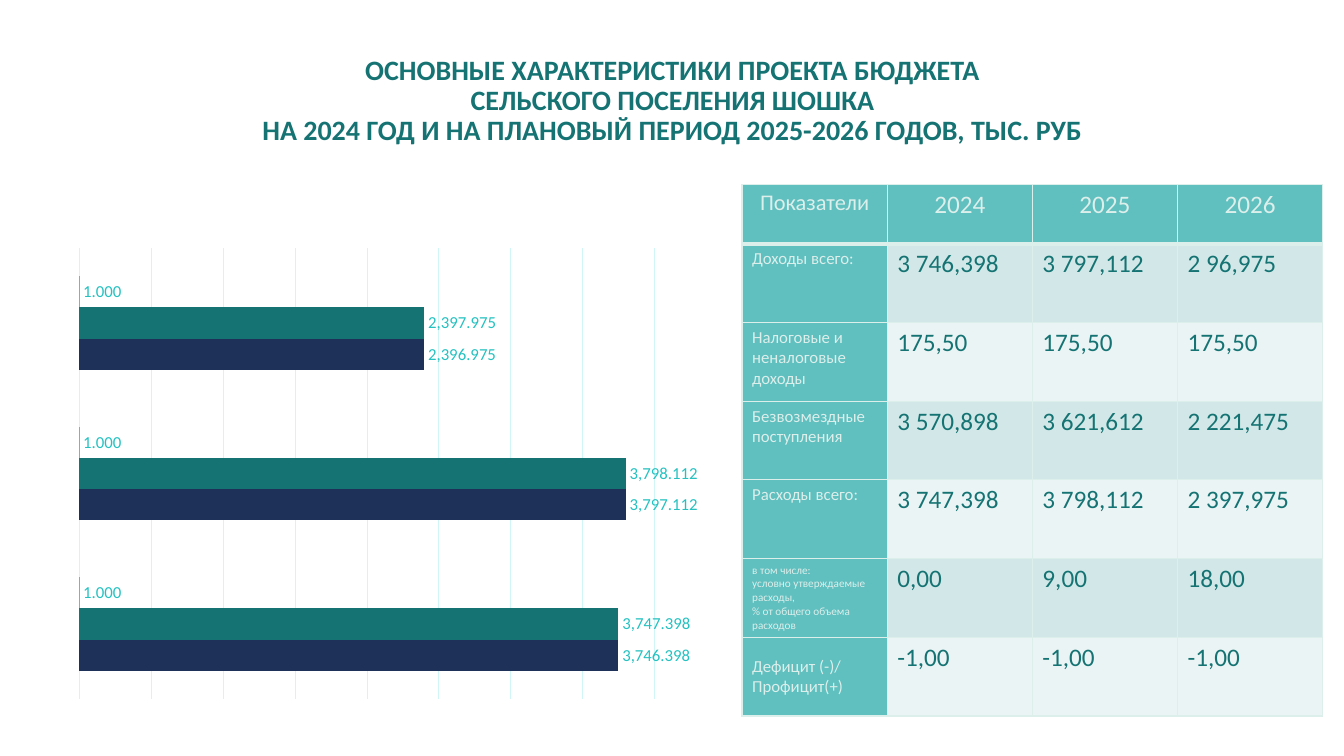
from lxml import etree
from pptx import Presentation
from pptx import util as u
from pptx.chart import data
from pptx.dml import color
from pptx.enum import chart as charts, text
from pptx.oxml import ns

TEAL = color.RGBColor(0x16, 0x73, 0x73)
NAVY = color.RGBColor(0x1E, 0x32, 0x59)
AQUA = color.RGBColor(0x60, 0xBF, 0xBF)
BRIGHT = color.RGBColor(0x25, 0xC1, 0xC1)
GRID = color.RGBColor(0xD0, 0xF6, 0xF6)
PALE = color.RGBColor(0xDC, 0xEF, 0xEB)
BANDS = (color.RGBColor(0xD2, 0xE8, 0xE8), color.RGBColor(0xEA, 0xF4, 0xF4))
SCALE = 9144

TITLE = ("ОСНОВНЫЕ ХАРАКТЕРИСТИКИ ПРОЕКТА БЮДЖЕТА",
         "СЕЛЬСКОГО ПОСЕЛЕНИЯ ШОШКА",
         "НА 2024 ГОД И НА ПЛАНОВЫЙ ПЕРИОД 2025-2026 ГОДОВ, ТЫС. РУБ")
SERIES = (("Series 1", (3746.398, 3797.112, 2396.975), NAVY),
          ("Series 2", (3747.398, 3798.112, 2397.975), TEAL),
          ("Series 3", (1, 1, 1), AQUA))
HEADINGS = ("Показатели", "2024", "2025", "2026")
BUDGET = (
    (("Доходы всего:",), 12, ("3 746,398", "3 797,112", "2 96,975")),
    (("Налоговые и неналоговые доходы",), 12, ("175,50",) * 3),
    (("Безвозмездные поступления",), 12, ("3 570,898", "3 621,612", "2 221,475")),
    (("Расходы всего:",), 12, ("3 747,398", "3 798,112", "2 397,975")),
    (("в том числе:", "условно утверждаемые расходы,", "% от общего объема расходов"),
     8, ("0,00", "9,00", "18,00")),
    (("Дефицит (-)/ Профицит(+)",), 12, ("-1,00",) * 3),
)


def px(*lengths):
    return [u.Emu(length * SCALE) for length in lengths]


class BudgetSlide:
    """Holds the style and the current slide, and adds each kind of element."""

    font = "Calibri"

    def __init__(self, deck):
        self.page = deck.slides.add_slide(deck.slide_layouts[5])

    def style(self, font, size, colour, bold=False):
        font.name = self.font
        font.size = u.Pt(size)
        font.bold = bold
        font.color.rgb = colour

    def span(self, para, words, size, colour, bold=False):
        span = para.add_run()
        span.text = words
        self.style(span.font, size, colour, bold)

    def title(self, lines, place):
        box = self.page.shapes.title
        box.left, box.top, box.width, box.height = px(*place)
        frame = box.text_frame
        frame.word_wrap = True
        frame.auto_size = text.MSO_AUTO_SIZE.NONE
        frame.vertical_anchor = text.MSO_ANCHOR.MIDDLE
        para = frame.paragraphs[0]
        para.alignment = text.PP_ALIGN.CENTER
        para.line_spacing = 0.9
        for index, line in enumerate(lines):
            if index:
                para.add_line_break()
            self.span(para, line, 20, TEAL, True)

    def bar_chart(self, series, place):
        figures = data.CategoryChartData(number_format="#,##0.000")
        figures.categories = ("1", "2", "3")
        for name, values, _ in series:
            figures.add_series(name, values)
        chart = self.page.shapes.add_chart(
            charts.XL_CHART_TYPE.BAR_CLUSTERED, *px(*place), figures).chart
        self.style(chart.font, 10, TEAL)
        chart.has_title = False
        chart.has_legend = False
        chart.category_axis.visible = False
        axis = chart.value_axis
        axis.visible = False
        axis.minimum_scale, axis.maximum_scale, axis.major_unit = 0, 4000, 500
        axis.has_major_gridlines = True
        axis.major_gridlines.format.line.color.rgb = GRID
        axis.major_gridlines.format.line.width = u.Pt(0.75)
        plot = chart.plots[0]
        plot.gap_width, plot.overlap, plot.vary_by_categories = 182, 0, False
        for bars, (_, _, colour) in zip(plot.series, series):
            bars.format.fill.solid()
            bars.format.fill.fore_color.rgb = colour
            labels = bars.data_labels
            labels.show_value = True
            labels.number_format = "#,##0.000"
            labels.number_format_is_linked = False
            labels.position = charts.XL_LABEL_POSITION.OUTSIDE_END
            self.style(labels.font, 12, BRIGHT)
        self.plot_area(chart, (0.07, 0.11, 0.86, 0.85))

    def plot_area(self, chart, shares):
        area = chart._chartSpace.find(".//" + ns.qn("c:plotArea"))
        for old in area.findall(ns.qn("c:layout")):
            area.remove(old)
        layout = etree.Element(ns.qn("c:layout"))
        manual = etree.SubElement(layout, ns.qn("c:manualLayout"))
        settings = [("layoutTarget", "inner"), ("xMode", "edge"), ("yMode", "edge")]
        settings += zip("xywh", map(str, shares))
        for tag, value in settings:
            etree.SubElement(manual, ns.qn("c:" + tag), val=value)
        area.insert(0, layout)

    def cell(self, cell, lines, size, colour, fill, centred=False, bottom=1):
        borders = cell._tc.get_or_add_tcPr()
        for side in "LRTB":
            width = u.Pt(bottom if side == "B" else 1)
            line = etree.SubElement(borders, ns.qn("a:ln" + side), w=str(width))
            solid = etree.SubElement(line, ns.qn("a:solidFill"))
            etree.SubElement(solid, ns.qn("a:srgbClr"), val=str(PALE))
        cell.fill.solid()
        cell.fill.fore_color.rgb = fill
        frame = cell.text_frame
        for index, words in enumerate(lines):
            para = frame.add_paragraph() if index else frame.paragraphs[0]
            if centred:
                para.alignment = text.PP_ALIGN.CENTER
            self.span(para, words, size, colour)

    def table(self, headings, rows, place):
        table = self.page.shapes.add_table(
            len(rows) + 1, len(headings), *px(*place)).table
        table.first_row = table.horz_banding = False
        for column in table.columns:
            column.width = px(144)[0]
        for index, row in enumerate(table.rows):
            row.height = px(78 if index else 59)[0]
        for column, heading in enumerate(headings):
            self.cell(table.cell(0, column), (heading,), 18 if column else 16,
                      PALE, AQUA, centred=True, bottom=3)
        for index, (label, size, values) in enumerate(rows):
            self.cell(table.cell(index + 1, 0), label, size, PALE, AQUA)
            for column, value in enumerate(values, 1):
                self.cell(table.cell(index + 1, column), (value,), 18, TEAL,
                          BANDS[index % 2])
        table.cell(len(rows), 0).vertical_anchor = text.MSO_ANCHOR.MIDDLE


def main():
    deck = Presentation()
    deck.slide_width, deck.slide_height = px(1333, 750)
    slide = BudgetSlide(deck)
    slide.title(TITLE, (92, 16, 1150, 169))
    slide.bar_chart(SERIES, (32, 188, 664, 527))
    slide.table(HEADINGS, BUDGET, (736, 183, 576, 527))
    deck.save("out.pptx")


if __name__ == "__main__":
    main()
